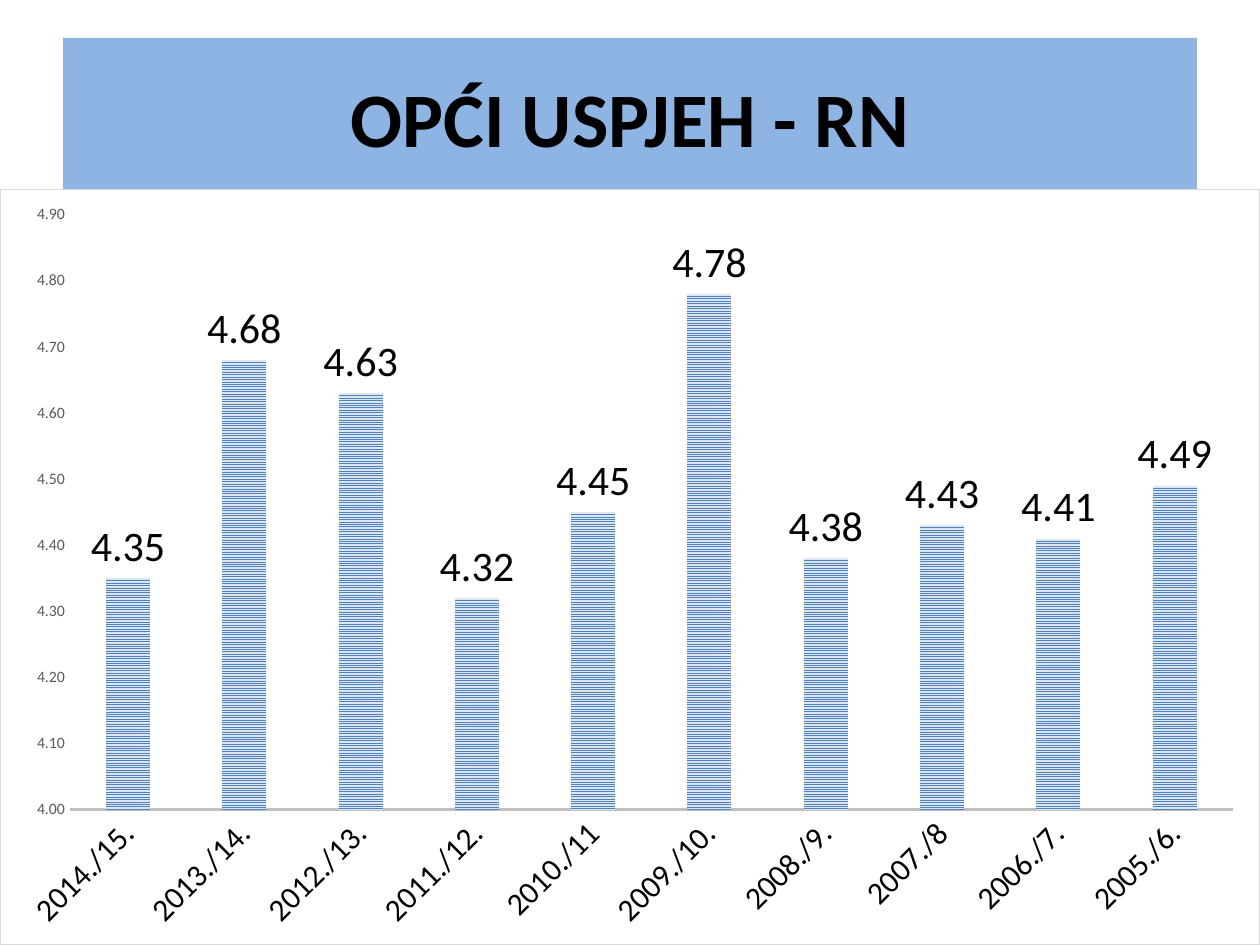
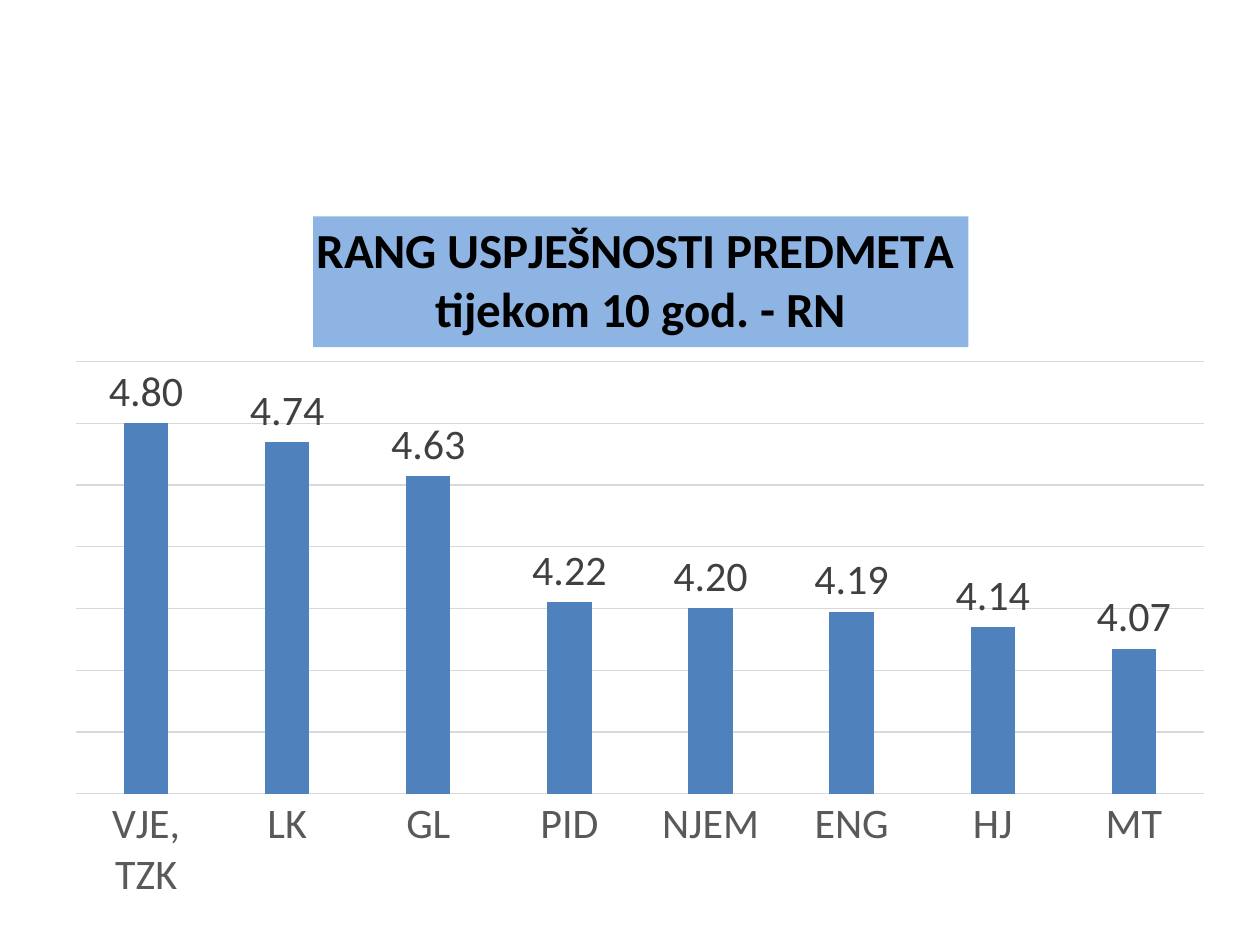
from dataclasses import dataclass

from lxml import etree
from pptx import Presentation
from pptx.chart.data import CategoryChartData
from pptx.dml.color import RGBColor
from pptx.enum.chart import XL_CHART_TYPE, XL_LABEL_POSITION, XL_TICK_MARK
from pptx.enum.dml import MSO_PATTERN
from pptx.enum.text import MSO_ANCHOR, PP_ALIGN
from pptx.oxml.ns import qn
from pptx.util import Emu, Pt

COLUMNS = XL_CHART_TYPE.COLUMN_CLUSTERED
OUTSIDE_END = XL_LABEL_POSITION.OUTSIDE_END
NO_TICKS = XL_TICK_MARK.NONE
STRIPES = MSO_PATTERN.NARROW_HORIZONTAL
CENTER = PP_ALIGN.CENTER
MIDDLE = MSO_ANCHOR.MIDDLE

EMU_PER_PX = 9144  # 100 px to the inch
TITLE_ONLY, BLANK = 5, 6
TWO_DECIMALS = "0.00"


@dataclass(frozen=True)
class Theme:
    font: str = "Calibri"
    white: str = "FFFFFF"
    black: str = "000000"
    dark_gray: str = "404040"
    gray: str = "595959"
    axis_line: str = "BFBFBF"
    hairline: str = "D9D9D9"
    band: str = "8EB4E3"
    bar: str = "4F81BD"
    bar_stripe: str = "DCE6F2"
    title_size: int = 44
    chart_title_size: int = 28
    label_size: int = 24
    year_size: int = 18
    base_size: int = 10
    scale_size: int = 9


THEME = Theme()

GRADES_BY_YEAR = {
    "2014./15.": 4.35, "2013./14.": 4.68, "2012./13.": 4.63,
    "2011./12.": 4.32, "2010./11": 4.45, "2009./10.": 4.78,
    "2008./9.": 4.38, "2007./8": 4.43, "2006./7.": 4.41, "2005./6.": 4.49,
}
GRADES_BY_SUBJECT = {
    "VJE, TZK": 4.80, "LK": 4.74, "GL": 4.63, "PID": 4.22,
    "NJEM": 4.20, "ENG": 4.19, "HJ": 4.14, "MT": 4.07,
}


def px(length):
    return Emu(length * EMU_PER_PX)


def rgb(color):
    return RGBColor.from_string(color)


# Text and formats
def style_font(font, size, color=THEME.black, bold=False):
    font.name = THEME.font
    font.size = Pt(size)
    font.bold = bold
    font.color.rgb = rgb(color)


def write_text(text_frame, text, **font_format):
    for index, line in enumerate(text.split("\n")):
        paragraph = text_frame.add_paragraph() if index else text_frame.paragraphs[0]
        paragraph.alignment = CENTER
        run = paragraph.add_run()
        run.text = line
        style_font(run.font, **font_format)


def fill_solid(fill, color):
    fill.solid()
    fill.fore_color.rgb = rgb(color)


def style_line(line, color, width=0.75):
    fill_solid(line.fill, color)
    line.width = Pt(width)


def add_title(slide, text, left, top, width, height):
    title = slide.shapes.title
    title.left, title.top, title.width, title.height = map(px, (left, top, width, height))
    fill_solid(title.fill, THEME.band)
    title.text_frame.vertical_anchor = MIDDLE
    write_text(title.text_frame, text, size=THEME.title_size, bold=True)


# Charts
def add_xml(parent, tag, **attributes):
    return etree.SubElement(parent, qn(tag), attributes)


def style_chart_area(chart, fill=None, border=None):
    """Fill and outline the whole chart; None leaves it clear."""
    area = etree.Element(qn("c:spPr"))
    outline = etree.Element(qn("a:ln"), w=str(Pt(0.75)))
    for parent, color in ((area, fill), (outline, border)):
        if color:
            add_xml(add_xml(parent, "a:solidFill"), "a:srgbClr", val=color)
        else:
            add_xml(parent, "a:noFill")
    area.append(outline)
    chart.element.find(qn("c:chart")).addnext(area)


def place_plot(chart, box, plot_box):
    """Pin the inner plot area; both boxes are in slide px."""
    plot_area = chart.element.find(".//" + qn("c:plotArea"))
    for old_layout in plot_area.findall(qn("c:layout")):
        plot_area.remove(old_layout)
    layout = etree.Element(qn("c:layout"))
    plot_area.insert(0, layout)
    manual = add_xml(layout, "c:manualLayout")
    left, top, width, height = box
    plot_left, plot_top, plot_width, plot_height = plot_box
    add_xml(manual, "c:layoutTarget", val="inner")
    add_xml(manual, "c:xMode", val="edge")
    add_xml(manual, "c:yMode", val="edge")
    fractions = {
        "x": (plot_left - left) / width, "y": (plot_top - top) / height,
        "w": plot_width / width, "h": plot_height / height,
    }
    for name, fraction in fractions.items():
        add_xml(manual, "c:" + name, val=f"{fraction:.4f}")


def add_column_chart(slide, grades, box, plot_box, scale, gap, overlap, label_color):
    data = CategoryChartData(number_format=TWO_DECIMALS)
    data.categories = list(grades)
    data.add_series("Series 1", list(grades.values()))
    chart = slide.shapes.add_chart(COLUMNS, *map(px, box), data).chart
    chart.has_legend = False
    chart.has_title = False
    style_font(chart.font, THEME.base_size)
    place_plot(chart, box, plot_box)

    plot = chart.plots[0]
    plot.vary_by_categories = False
    plot.gap_width = gap
    plot.overlap = overlap
    plot.series[0].invert_if_negative = False
    plot.has_data_labels = True
    labels = plot.data_labels
    labels.show_value = True
    labels.position = OUTSIDE_END
    labels.number_format = TWO_DECIMALS
    labels.number_format_is_linked = False
    style_font(labels.font, THEME.label_size, label_color)

    value_axis = chart.value_axis
    value_axis.minimum_scale, value_axis.maximum_scale, value_axis.major_unit = scale
    value_axis.has_major_gridlines = False
    value_axis.tick_labels.number_format = TWO_DECIMALS
    value_axis.tick_labels.number_format_is_linked = False
    for axis in (value_axis, chart.category_axis):
        axis.major_tick_mark = axis.minor_tick_mark = NO_TICKS
    return chart


def style_category_axis(axis, size, color, line_color, line_width=0.75):
    style_font(axis.tick_labels.font, size, color)
    style_line(axis.format.line, line_color, line_width)


# Slides
def add_overall_slide(presentation):
    slide = presentation.slides.add_slide(presentation.slide_layouts[TITLE_ONLY])
    add_title(slide, "OPĆI USPJEH - RN", 50, 30, 900, 125)
    chart = add_column_chart(
        slide, GRADES_BY_YEAR, box=(0, 150, 1000, 600), plot_box=(55, 170, 924, 473),
        scale=(4.0, 4.9, 0.1), gap=164, overlap=-22, label_color=THEME.black)
    style_chart_area(chart, THEME.white, THEME.hairline)

    stripes = chart.plots[0].series[0].format.fill
    stripes.patterned()
    stripes.pattern = STRIPES
    stripes.fore_color.rgb = rgb(THEME.bar)
    stripes.back_color.rgb = rgb(THEME.bar_stripe)

    style_category_axis(chart.category_axis, THEME.year_size, THEME.black,
                        THEME.axis_line, 1.5)
    # Slant the school years by 45 degrees
    year_text = chart.category_axis.element if hasattr(chart.category_axis, "element") else None
    if year_text is None:
        year_text = chart.element.find(".//" + qn("c:catAx"))
    year_text.find(qn("c:txPr")).find(qn("a:bodyPr")).set("rot", str(-45 * 60000))
    style_font(chart.value_axis.tick_labels.font, THEME.scale_size, THEME.gray)
    chart.value_axis.format.line.fill.background()


def add_subject_slide(presentation):
    slide = presentation.slides.add_slide(presentation.slide_layouts[BLANK])
    chart = add_column_chart(
        slide, GRADES_BY_SUBJECT, box=(42, 155, 933, 572), plot_box=(60, 287, 896, 343),
        scale=(3.6, 5.0, 0.2), gap=219, overlap=-27, label_color=THEME.dark_gray)
    style_chart_area(chart)
    fill_solid(chart.plots[0].series[0].format.fill, THEME.bar)
    style_category_axis(chart.category_axis, THEME.label_size, THEME.gray, THEME.hairline)

    value_axis = chart.value_axis
    value_axis.has_major_gridlines = True
    style_line(value_axis.major_gridlines.format.line, THEME.hairline)
    value_axis.visible = False

    chart.has_title = True
    write_text(chart.chart_title.text_frame,
               "RANG USPJEŠNOSTI PREDMETA \ntijekom 10 god. - RN",
               size=THEME.chart_title_size, bold=True)
    fill_solid(chart.chart_title.format.fill, THEME.band)


def main():
    presentation = Presentation()
    presentation.slide_width, presentation.slide_height = px(1000), px(750)
    add_overall_slide(presentation)
    add_subject_slide(presentation)
    presentation.save("out.pptx")


if __name__ == "__main__":
    main()
